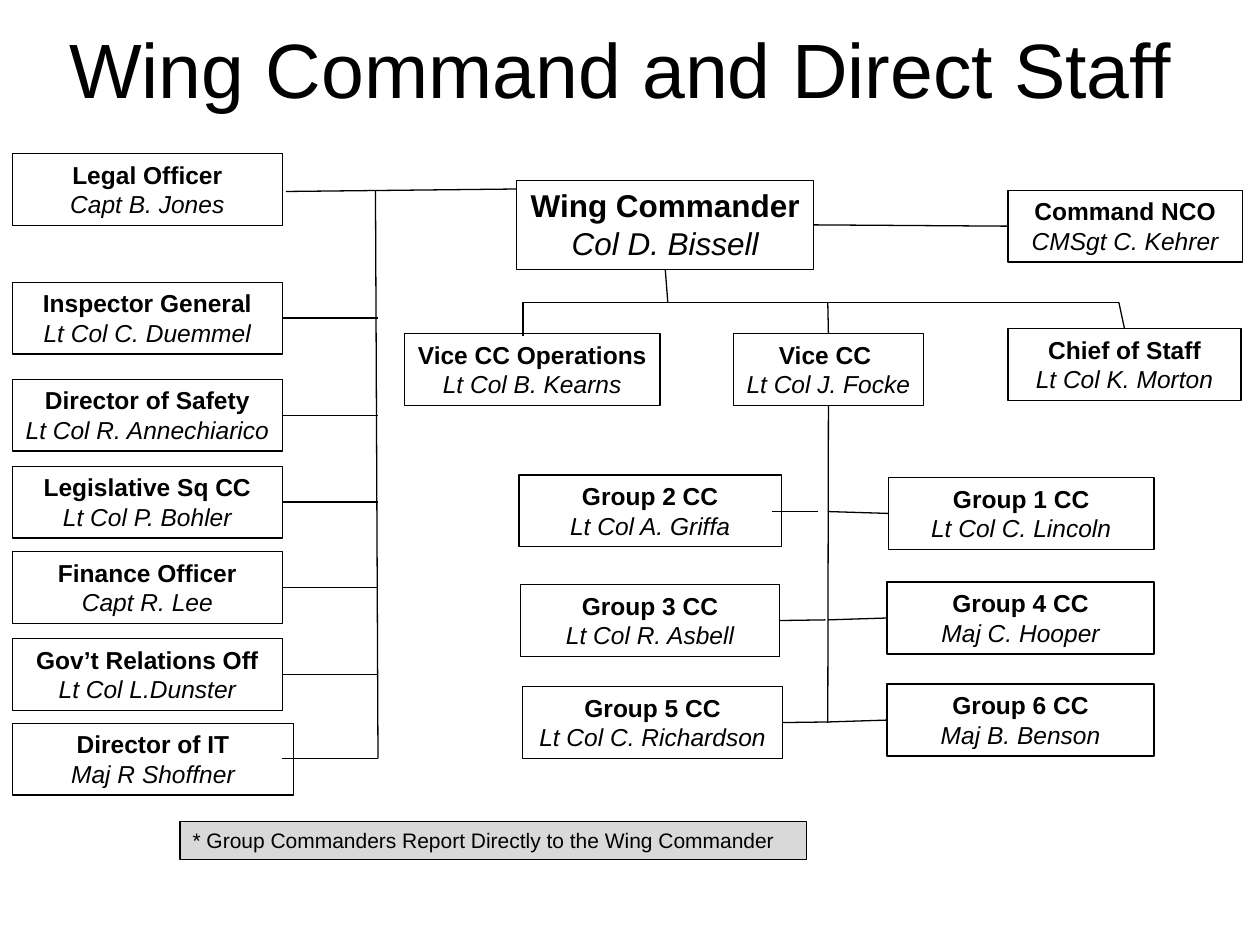
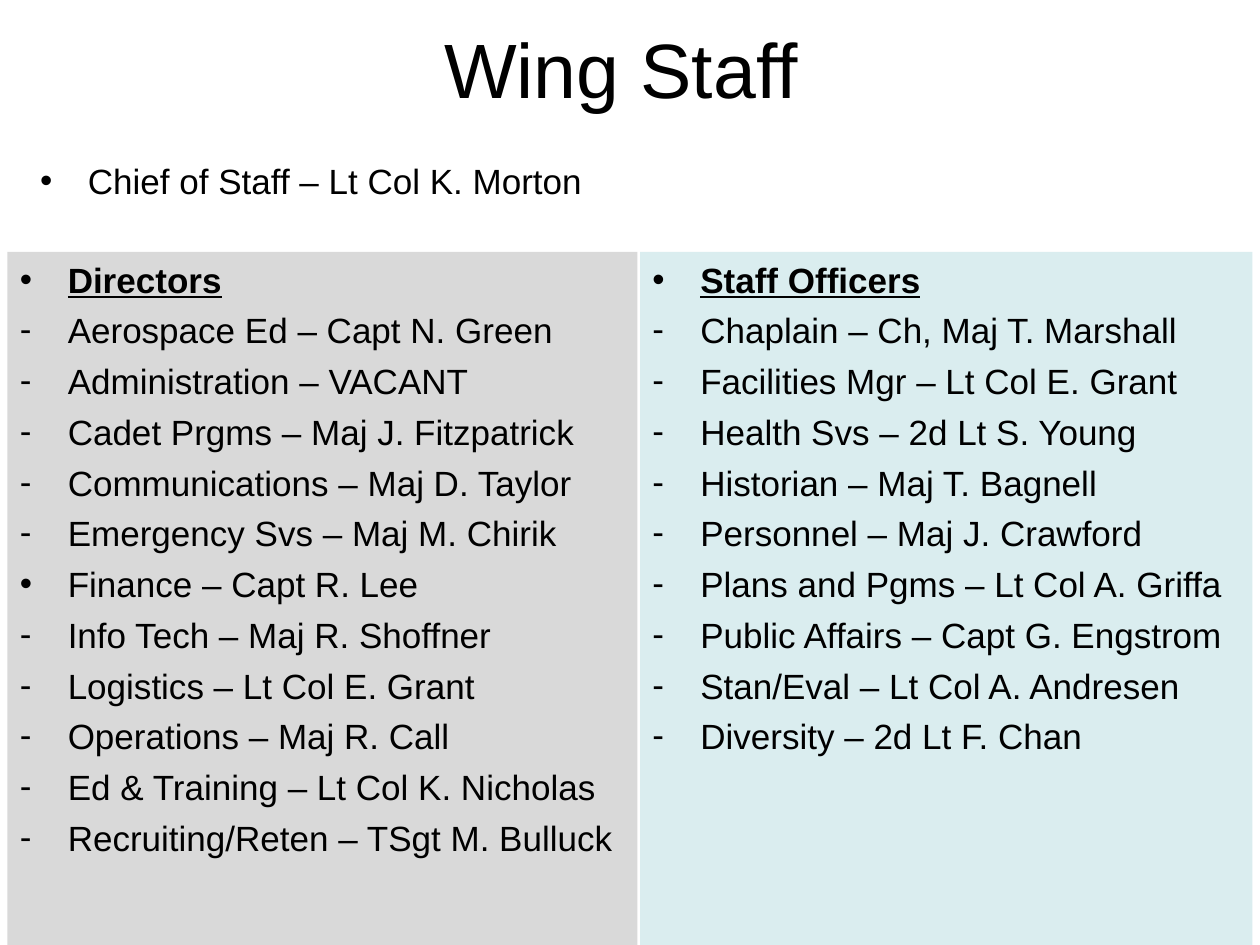
from dataclasses import dataclass

from lxml.etree import SubElement
from pptx import Presentation
from pptx.dml.color import RGBColor
from pptx.enum.shapes import MSO_CONNECTOR, MSO_SHAPE
from pptx.enum.text import MSO_ANCHOR, PP_ALIGN
from pptx.oxml.ns import qn
from pptx.util import Inches, Pt


@dataclass(frozen=True)
class Theme:
    font: str = "Arial"
    ink: RGBColor = RGBColor(0, 0, 0)
    grey: RGBColor = RGBColor(0xD9, 0xD9, 0xD9)
    aqua: RGBColor = RGBColor(0xDA, 0xED, 0xEF)
    title_size: int = 44
    list_size: int = 20
    commander_size: int = 18
    post_size: int = 14
    note_size: int = 12
    rule: float = 0.75


THEME = Theme()

# The slide is a grid of 100 columns by 75 rows; all lengths are in cells.
COLUMNS, ROWS = 100, 75
CELL = Inches(10) / COLUMNS
TITLE_AREA = (4.3, 0, 90, 10.7)
TOP, LEFT, BOTTOM, RIGHT = range(4)

# Content of the organisation chart
CHART_TITLE = "Wing Command and Direct Staff"
COMMANDER = ("Wing Commander", "Col D. Bissell", (41, 14.3, 23.6, 7.1))
POST_HEIGHT = 5.7
POSTS = [  # role, holder, left, top, width
    ("Vice CC Operations", "Lt Col B. Kearns", 32.1, 26.5, 20.3),
    ("Vice CC ", "Lt Col J. Focke", 58.2, 26.5, 15.1),
    ("Chief of Staff", "Lt Col K. Morton", 80, 26.1, 18.5),
    ("Command NCO", "CMSgt C. Kehrer", 80, 15.1, 18.6),
    ("Group 2 CC", "Lt Col A. Griffa", 41.2, 37.7, 20.8),
    ("Group 3 CC", "Lt Col R. Asbell", 41.3, 46.4, 20.6),
    ("Group 5 CC", "Lt Col C. Richardson", 41.5, 54.5, 20.6),
    ("Group 1 CC", "Lt Col C. Lincoln", 70.5, 37.9, 21.1),
    ("Group 4 CC", "Maj C. Hooper", 70.4, 46.2, 21.2),
    ("Group 6 CC", "Maj B. Benson", 70.4, 54.3, 21.2),
]
STAFF_LEFT, STAFF_WIDTH, IT_WIDTH = 1, 21.4, 22.3
DIRECT_STAFF = [  # role, holder, top
    ("Legal Officer", "Capt B. Jones", 12.2),
    ("Inspector General", "Lt Col C. Duemmel", 22.4),
    ("Director of Safety", "Lt Col R. Annechiarico", 30.1),
    ("Legislative Sq CC", "Lt Col P. Bohler", 37),
    ("Finance Officer", "Capt R. Lee", 43.8),
    ("Gov’t Relations Off", "Lt Col L.Dunster", 50.7),
    ("Director of IT", "Maj R Shoffner", 57.4),
]
NOTE = ("* Group Commanders Report Directly to the Wing Commander", (14.3, 65.2, 49.7, 3))

# An end is a grid point, or a post with the side to join.
STAFF_TRUNK, GROUP_TRUNK, VICE_BAR = 30, 65.7, 24
LINES = [
    (("Wing Commander", RIGHT), ("Command NCO", LEFT)),
    ((41, 15), (22.7, 15.2)),
    ((29.8, 15.1), (STAFF_TRUNK, 60.2)),
    ((22.4, 60.2), (STAFF_TRUNK, 60.2)),
    ((41.4, VICE_BAR), (88.8, VICE_BAR)),
    (("Wing Commander", BOTTOM), (53, VICE_BAR)),
    ((41.5, VICE_BAR), (41.5, 26.7)),
    ((GROUP_TRUNK, VICE_BAR), ("Vice CC ", TOP)),
    ((88.8, VICE_BAR), ("Chief of Staff", TOP)),
    (("Vice CC ", BOTTOM), (GROUP_TRUNK, 57.4)),
    ((61.3, 40.6), (64.9, 40.6)),
    (("Group 3 CC", RIGHT), (65.5, 49.2)),
    (("Group 5 CC", RIGHT), (GROUP_TRUNK, 57.3)),
    ((GROUP_TRUNK, 40.6), ("Group 1 CC", LEFT)),
    ((GROUP_TRUNK, 49.2), ("Group 4 CC", LEFT)),
    ((GROUP_TRUNK, 57.3), ("Group 6 CC", LEFT)),
]
# Staff between the first and the last hang on the trunk by a level line.
LINES += [((role, RIGHT), (STAFF_TRUNK, top + POST_HEIGHT / 2))
          for role, _, top in DIRECT_STAFF[1:-1]]

# Content of the staff list
STAFF_TITLE = "Wing Staff"
CHIEF = ("Chief of Staff – Lt Col K. Morton", (2.2, 12.2, 90, 5.3))
PANELS = [
    ("Directors", THEME.grey, (0.6, 20, 50, 55), [
        "Aerospace Ed – Capt N. Green",
        "Administration – VACANT",
        "Cadet Prgms – Maj J. Fitzpatrick",
        "Communications – Maj D. Taylor",
        "Emergency Svs – Maj M. Chirik",
        "Finance – Capt R. Lee",
        "Info Tech – Maj R. Shoffner",
        "Logistics – Lt Col E. Grant",
        "Operations – Maj R. Call",
        "Ed & Training – Lt Col K. Nicholas",
        "Recruiting/Reten – TSgt M. Bulluck",
    ]),
    ("Staff Officers", THEME.aqua, (50.8, 20, 48.6, 55), [
        "Chaplain – Ch, Maj T. Marshall",
        "Facilities Mgr – Lt Col E. Grant",
        "Health Svs – 2d Lt S. Young",
        "Historian – Maj T. Bagnell",
        "Personnel – Maj J. Crawford",
        "Plans and Pgms – Lt Col A. Griffa",
        "Public Affairs – Capt G. Engstrom",
        "Stan/Eval – Lt Col A. Andresen",
        "Diversity – 2d Lt F. Chan",
    ]),
]
DOTTED = {"Finance – Capt R. Lee"}


def cells(*lengths):
    return [round(length * CELL) for length in lengths]


def add_run(paragraph, text, size, bold=False, italic=False, underline=False):
    run = paragraph.add_run()
    run.text = text
    font = run.font
    font.name, font.size, font.color.rgb = THEME.font, Pt(size), THEME.ink
    font.bold, font.italic, font.underline = bold, italic, underline


def set_frame(shape, side_inset, anchor=MSO_ANCHOR.TOP):
    frame = shape.text_frame
    frame.word_wrap = True
    frame.vertical_anchor = anchor
    frame.margin_left = frame.margin_right = Inches(side_inset)
    return frame


def next_paragraph(frame, align=PP_ALIGN.LEFT):
    first = frame.paragraphs[0]
    paragraph = frame.add_paragraph() if first.runs else first
    paragraph.alignment = align
    return paragraph


def add_titled_slide(deck, title):
    slide = deck.slides.add_slide(deck.slide_layouts[5])
    heading = slide.shapes.title
    heading.left, heading.top, heading.width, heading.height = cells(*TITLE_AREA)
    frame = set_frame(heading, 0.05, MSO_ANCHOR.MIDDLE)
    add_run(next_paragraph(frame, PP_ALIGN.CENTER), title, THEME.title_size)
    return slide


def add_box(slide, area, fill=None, outlined=True):
    box = slide.shapes.add_shape(MSO_SHAPE.RECTANGLE, *cells(*area))
    box.shadow.inherit = False
    if fill is None:
        box.fill.background()
    else:
        box.fill.solid()
        box.fill.fore_color.rgb = fill
    if outlined:
        box.line.color.rgb = THEME.ink
        box.line.width = Pt(THEME.rule)
    else:
        box.line.fill.background()
    return box


def add_post(slide, role, holder, area, size=THEME.post_size):
    box = add_box(slide, area)
    frame = set_frame(box, 0.05)
    add_run(next_paragraph(frame, PP_ALIGN.CENTER), role, size, bold=True)
    add_run(next_paragraph(frame, PP_ALIGN.CENTER), holder, size, italic=True)
    return box


def add_line(slide, start, end, posts):
    points = [(0, 0) if place[0] in posts else cells(*place) for place in (start, end)]
    line = slide.shapes.add_connector(MSO_CONNECTOR.STRAIGHT, *points[0], *points[1])
    for (place, side), join in ((start, line.begin_connect), (end, line.end_connect)):
        if place in posts:
            join(posts[place], side)
    line.line.color.rgb = THEME.ink
    line.line.width = Pt(THEME.rule)
    SubElement(line._element.spPr, qn("a:effectLst"))


def add_item(frame, text, mark, heading=False):
    paragraph = next_paragraph(frame)
    properties = paragraph._p.get_or_add_pPr()
    properties.set("marL", str(Inches(0.38)))
    properties.set("indent", str(-Inches(0.38)))
    SubElement(properties, qn("a:buFont"), typeface=THEME.font)
    SubElement(properties, qn("a:buChar"), char=mark)
    if len(frame.paragraphs) > 1:
        paragraph.space_before = Pt(5)
    add_run(paragraph, text, THEME.list_size, bold=heading, underline=heading)


def build_chart_slide(deck):
    slide = add_titled_slide(deck, CHART_TITLE)

    # Posts
    role, holder, area = COMMANDER
    posts = {role: add_post(slide, role, holder, area, THEME.commander_size)}
    for role, holder, left, top, width in POSTS:
        posts[role] = add_post(slide, role, holder, (left, top, width, POST_HEIGHT))
    for role, holder, top in DIRECT_STAFF:
        width = IT_WIDTH if role == "Director of IT" else STAFF_WIDTH
        posts[role] = add_post(slide, role, holder, (STAFF_LEFT, top, width, POST_HEIGHT))

    # Reporting lines
    for start, end in LINES:
        add_line(slide, start, end, posts)

    # Note on group commanders
    text, area = NOTE
    note = add_box(slide, area, THEME.grey)
    add_run(next_paragraph(set_frame(note, 0.1)), text, THEME.note_size)


def build_staff_slide(deck):
    slide = add_titled_slide(deck, STAFF_TITLE)

    # Chief of staff
    text, area = CHIEF
    chief = slide.shapes.add_textbox(*cells(*area))
    add_item(set_frame(chief, 0.1), text, "•")

    # Two panels of staff
    for heading, fill, area, members in PANELS:
        frame = set_frame(add_box(slide, area, fill, outlined=False), 0.1)
        add_item(frame, heading, "•", heading=True)
        for member in members:
            add_item(frame, member, "•" if member in DOTTED else "-")


def main():
    deck = Presentation()
    deck.slide_width, deck.slide_height = cells(COLUMNS, ROWS)
    build_chart_slide(deck)
    build_staff_slide(deck)
    deck.save("out.pptx")


if __name__ == "__main__":
    main()
